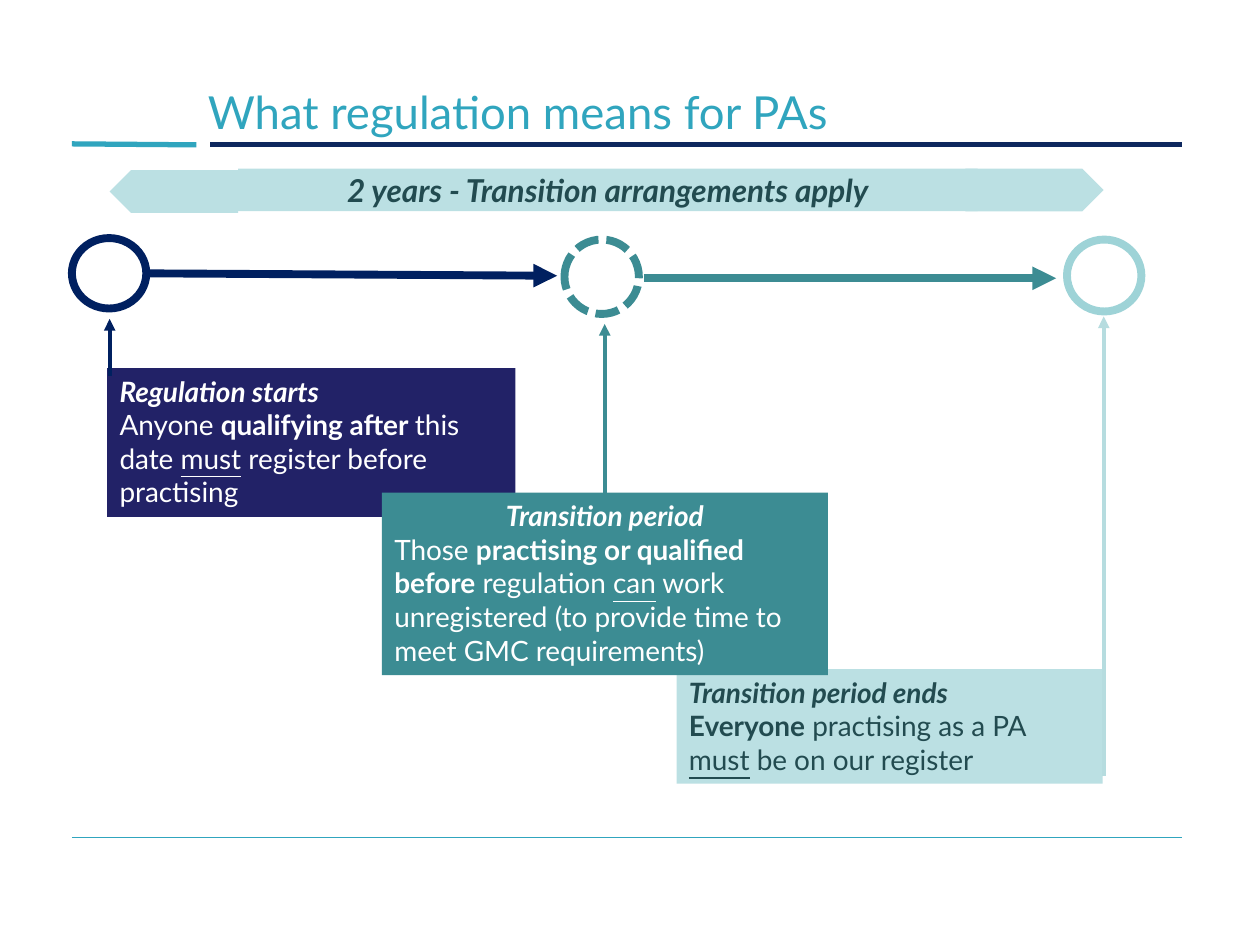
from lxml.etree import SubElement
from pptx import Presentation
from pptx.dml.color import RGBColor
from pptx.enum.dml import MSO_LINE
from pptx.enum.shapes import MSO_CONNECTOR, MSO_SHAPE as SHAPE
from pptx.enum.text import MSO_ANCHOR as ANCHOR, PP_ALIGN as ALIGN
from pptx.oxml.ns import qn
from pptx.util import Cm, Pt

WHITE = RGBColor(0xFF, 0xFF, 0xFF)
CYAN = RGBColor(0x30, 0xA5, 0xBE)
RULE_NAVY = RGBColor(0x0E, 0x28, 0x5E)
NAVY = RGBColor(0x00, 0x20, 0x60)
INDIGO = RGBColor(0x22, 0x22, 0x67)
TEAL = RGBColor(0x3C, 0x8C, 0x93)
AQUA = RGBColor(0x9E, 0xD3, 0xD7)
PALE_LINE = RGBColor(0xB6, 0xDC, 0xDF)
PALE = RGBColor(0xBB, 0xE0, 0xE3)
DARK = RGBColor(0x22, 0x4B, 0x50)


class Timeline:
    font = "Lato"

    def __init__(self, prs):
        self.s = prs.slides.add_slide(prs.slide_layouts[6])

    def line(self, x1, y1, x2, y2, color, width, arrow=False):
        c = self.s.shapes.add_connector(
            MSO_CONNECTOR.STRAIGHT, Cm(x1), Cm(y1), Cm(x2), Cm(y2))
        c.line.color.rgb = color
        c.line.width = Pt(width)
        sp_pr = c._element.spPr
        if arrow:
            SubElement(sp_pr.find(qn("a:ln")), qn("a:tailEnd"), type="triangle")
        SubElement(sp_pr, qn("a:effectLst"))

    def shape(self, kind, x, y, w, h, fill):
        sp = self.s.shapes.add_shape(kind, Cm(x), Cm(y), Cm(w), Cm(h))
        sp.shadow.inherit = False
        sp.fill.solid()
        sp.fill.fore_color.rgb = fill
        sp.line.fill.background()
        return sp

    def milestone(self, x, y, w, h, color, dash=None):
        sp = self.shape(SHAPE.OVAL, x, y, w, h, WHITE)
        sp.line.color.rgb = color
        sp.line.width = Pt(4.5)
        if dash:
            sp.line.dash_style = dash

    def add_runs(self, p, runs, size, color, align=ALIGN.LEFT):
        """Each run is (text, flags), flags being any of b, i and u."""
        p.alignment = align
        for text, flags in runs:
            r = p.add_run()
            r.text = text
            f = r.font
            f.name, f.size, f.color.rgb = self.font, Pt(size), color
            f.bold, f.italic, f.underline = (k in flags for k in "biu")

    def title(self, text, x, y, w, h):
        tf = self.s.shapes.add_textbox(Cm(x), Cm(y), Cm(w), Cm(h)).text_frame
        tf.word_wrap = True
        tf.vertical_anchor = ANCHOR.MIDDLE
        self.add_runs(tf.paragraphs[0], [(text, "")], 26, CYAN)

    def band(self, text, x, y, w, h):
        tf = self.shape(SHAPE.RECTANGLE, x, y, w, h, PALE).text_frame
        tf.vertical_anchor = ANCHOR.MIDDLE
        self.add_runs(tf.paragraphs[0], [(text, "bi")], 18, DARK, ALIGN.CENTER)

    def note(self, x, y, w, h, fill, color, heading, body, align=ALIGN.LEFT):
        tf = self.shape(SHAPE.RECTANGLE, x, y, w, h, fill).text_frame
        tf.word_wrap = True
        tf.vertical_anchor = ANCHOR.TOP
        self.add_runs(tf.paragraphs[0], [(heading, "bi")], 16, color, align)
        self.add_runs(tf.add_paragraph(), body, 16, color)


def main():
    prs = Presentation()
    prs.slide_width, prs.slide_height = Cm(25.4), Cm(19.05)
    t = Timeline(prs)

    # Rules and title
    t.line(4.24, 2.92, 23.83, 2.92, RULE_NAVY, 3)
    t.line(1.45, 2.9, 3.96, 2.92, CYAN, 3)
    t.line(1.45, 16.89, 23.83, 16.89, CYAN, 0.75)
    t.title("What regulation means for PAs", 3.94, 1.32, 19.89, 1.85)

    # Milestones and the arrows between them
    t.line(2.92, 5.51, 11.23, 5.56, NAVY, 4.5, arrow=True)
    t.milestone(11.38, 4.83, 1.5, 1.5, TEAL, MSO_LINE.SQUARE_DOT)
    t.milestone(21.51, 4.83, 1.5, 1.45, AQUA)
    t.line(12.98, 5.61, 21.29, 5.61, TEAL, 4.5, arrow=True)
    t.milestone(1.45, 4.8, 1.5, 1.42, NAVY)

    # Notes, each with an arrow up to its milestone
    t.note(13.64, 13.49, 8.59, 2.31, PALE, DARK, "Transition period ends",
           [("Everyone", "b"), (" practising as a PA ", ""), ("must", "u"),
            (" be on our register", "")])
    t.line(22.25, 15.65, 22.25, 6.38, PALE_LINE, 2.25, arrow=True)
    t.note(2.16, 7.42, 8.23, 3, INDIGO, WHITE, "Regulation starts",
           [("Anyone ", ""), ("qualifying after ", "b"), ("this date ", ""),
            ("must", "u"), (" register before practising", "")])
    t.line(2.21, 7.57, 2.21, 6.43, NAVY, 2.25, arrow=True)
    t.note(7.7, 9.93, 8.99, 3.68, TEAL, WHITE, "Transition period",
           [("Those ", ""), ("practising or qualified before", "b"),
            (" regulation ", ""), ("can", "u"),
            (" work unregistered (to provide time to meet GMC requirements)", "")],
           ALIGN.CENTER)
    t.line(12.19, 9.93, 12.19, 6.53, TEAL, 2.25, arrow=True)

    # Two-year band with pointed ends
    t.band("2 years - Transition arrangements apply", 4.8, 3.4, 14.91, 0.86)
    t.shape(SHAPE.PENTAGON, 19.46, 3.4, 2.79, 0.86, PALE)
    t.shape(SHAPE.PENTAGON, 2.21, 3.43, 2.59, 0.86, PALE).rotation = 180

    prs.save("out.pptx")


if __name__ == "__main__":
    main()
